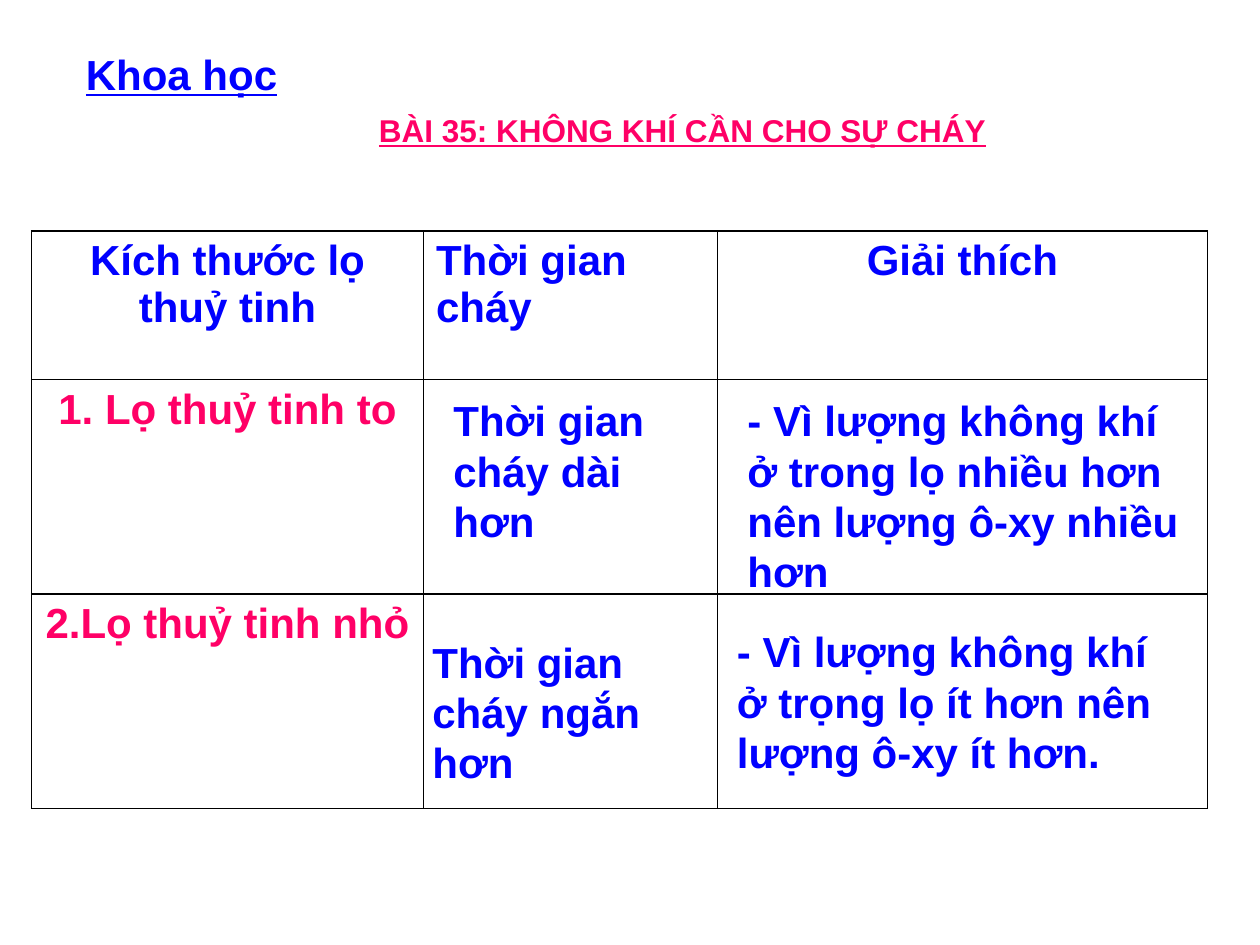
from lxml import etree
from pptx import Presentation
from pptx.dml.color import RGBColor
from pptx.enum import text
from pptx.oxml import ns
from pptx.util import Pt

BLUE = RGBColor(0x00, 0x00, 0xFF)
PINK = RGBColor(0xFF, 0x00, 0x66)
BLACK = RGBColor(0x00, 0x00, 0x00)
FONT = "Arial"
TITLE_ONLY = 5

COLUMN_WIDTHS = (224, 168, 280)
ROW_HEIGHTS = (85, 122.5, 122.5)
HEADERS = ("Kích thước lọ thuỷ tinh", "Thời gian cháy", "Giải thích")
JARS = ("1. Lọ thuỷ tinh to", "2.Lọ thuỷ tinh nhỏ")
# Text, then left, top, width and height relative to the table.
ANSWERS = (
    ("Thời gian cháy dài hơn", 234, 90, 132, 94),
    ("- Vì lượng không khí ở trong lọ nhiều hơn nên lượng ô-xy nhiều hơn",
     402, 90, 264, 122),
    ("Thời gian cháy ngắn hơn", 222, 228, 168, 94),
    ("- Vì lượng không khí ở trọng lọ ít hơn nên lượng ô-xy ít hơn.",
     396, 222, 270, 94),
)


def write(text_frame, words, color, size=24, centred=False, underline=None):
    text_frame.text = words
    paragraph = text_frame.paragraphs[0]
    paragraph.alignment = (
        text.PP_ALIGN.CENTER if centred else text.PP_ALIGN.LEFT)
    font = paragraph.runs[0].font
    font.name, font.size, font.bold = FONT, Pt(size), True
    font.underline = underline
    font.color.rgb = color


def place(shape, left, top, width, height):
    shape.left, shape.top = Pt(left), Pt(top)
    shape.width, shape.height = Pt(width), Pt(height)


def add_label(slide, words, box, **style):
    frame = slide.shapes.add_textbox(*(Pt(value) for value in box)).text_frame
    frame.word_wrap = True
    write(frame, words, BLUE, **style)


def add_heading(slide, left, top):
    add_label(slide, "Khoa học", (left, top, 150, 36), underline=True)
    title = slide.shapes.title
    place(title, left + 138, top + 36, 420, 29)
    frame = title.text_frame
    frame.auto_size = text.MSO_AUTO_SIZE.NONE
    frame.vertical_anchor = text.MSO_ANCHOR.TOP
    write(frame, "BÀI 35: KHÔNG KHÍ CẦN CHO SỰ CHÁY", PINK,
          size=18, centred=True, underline=True)


def format_cell(cell):
    """Give the cell black borders and no fill."""
    properties = cell._tc.get_or_add_tcPr()
    for side in ("lnL", "lnR", "lnT", "lnB"):
        line = etree.SubElement(properties, ns.qn(f"a:{side}"), w=str(Pt(1)))
        fill = etree.SubElement(line, ns.qn("a:solidFill"))
        etree.SubElement(fill, ns.qn("a:srgbClr"), val=str(BLACK))
    cell.fill.background()


def add_comparison(slide, left, top):
    """Add the table of jars, with the answers laid over its empty cells."""
    frame = slide.shapes.add_table(
        len(ROW_HEIGHTS), len(COLUMN_WIDTHS), Pt(left), Pt(top),
        Pt(sum(COLUMN_WIDTHS)), Pt(sum(ROW_HEIGHTS)))
    table = frame.table
    table.first_row = table.horz_banding = False
    for column, width in zip(table.columns, COLUMN_WIDTHS):
        column.width = Pt(width)
    for row, height in zip(table.rows, ROW_HEIGHTS):
        row.height = Pt(height)
    for cell in table.iter_cells():
        format_cell(cell)
    for index, words in enumerate(HEADERS):
        write(table.cell(0, index).text_frame, words, BLUE,
              centred=index != 1)
    for index, words in enumerate(JARS, start=1):
        write(table.cell(index, 0).text_frame, words, PINK, centred=True)
    for words, x, y, width, height in ANSWERS:
        add_label(slide, words, (left + x, top + y, width, height))


def main():
    presentation = Presentation()
    presentation.slide_width, presentation.slide_height = Pt(720), Pt(540)
    slide = presentation.slides.add_slide(
        presentation.slide_layouts[TITLE_ONLY])
    add_heading(slide, 42, 24)
    add_comparison(slide, 18, 132)
    presentation.save("out.pptx")


if __name__ == "__main__":
    main()
